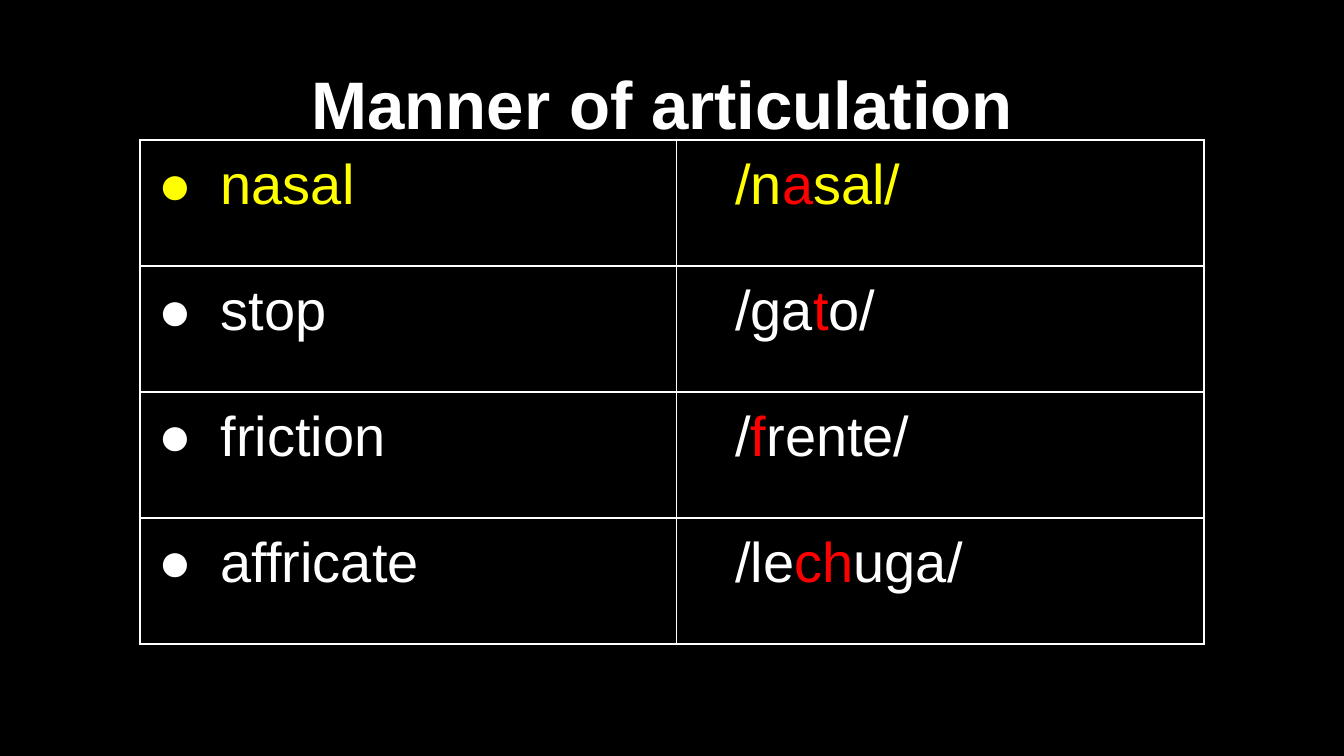
import pptx
import pptx.dml.color
import pptx.enum.text
import pptx.oxml
import pptx.oxml.ns
import pptx.util

BLACK = pptx.dml.color.RGBColor(0, 0, 0)
WHITE = pptx.dml.color.RGBColor(255, 255, 255)
YELLOW = pptx.dml.color.RGBColor(255, 255, 0)
RED = pptx.dml.color.RGBColor(255, 0, 0)

MANNERS = [
    ("nasal", ("/n", "a", "sal/"), YELLOW),
    ("stop", ("/ga", "t", "o/"), WHITE),
    ("friction", ("/", "f", "rente/"), WHITE),
    ("affricate", ("/le", "ch", "uga/"), WHITE),
]


class Deck:
    font = "Arial"
    title_size = 36
    body_size = 30
    padding = pptx.util.Inches(0.1)
    grid_columns = 96
    grid_rows = 54

    def __init__(self, width):
        self.presentation = pptx.Presentation()
        self.presentation.slide_width = pptx.util.Inches(width)
        self.presentation.slide_height = pptx.util.Inches(width * 9 / 16)

    def add_slide(self):
        self.slide = self.presentation.slides.add_slide(self.presentation.slide_layouts[5])
        self.slide.background.fill.solid()
        self.slide.background.fill.fore_color.rgb = BLACK

    def across(self, columns):
        return round(self.presentation.slide_width * columns / self.grid_columns)

    def down(self, rows):
        return round(self.presentation.slide_height * rows / self.grid_rows)

    def pad(self, holder):
        holder.margin_left = holder.margin_right = self.padding
        holder.margin_top = holder.margin_bottom = self.padding

    def style(self, run, size, color, bold=False):
        run.font.name = self.font
        run.font.size = pptx.util.Pt(size)
        run.font.bold = bold
        run.font.color.rgb = color

    def title(self, text, left, top, width, height):
        heading = self.slide.shapes.title
        heading.left, heading.width = self.across(left), self.across(width)
        heading.top, heading.height = self.down(top), self.down(height)
        frame = heading.text_frame
        frame.text = text
        frame.word_wrap = True
        frame.auto_size = pptx.enum.text.MSO_AUTO_SIZE.NONE
        frame.vertical_anchor = pptx.enum.text.MSO_ANCHOR.BOTTOM
        self.pad(frame)
        frame.paragraphs[0].alignment = pptx.enum.text.PP_ALIGN.CENTER
        self.style(frame.paragraphs[0].runs[0], self.title_size, WHITE, bold=True)

    def table(self, left, top, column_widths, row_height, row_count):
        grid = self.slide.shapes.add_table(
            row_count, len(column_widths), self.across(left), self.down(top),
            self.across(sum(column_widths)), self.down(row_height * row_count)).table
        grid.first_row = grid.horz_banding = False
        for column, width in zip(grid.columns, column_widths):
            column.width = self.across(width)
        for row in grid.rows:
            row.height = self.down(row_height)
        for cell in grid.iter_cells():
            cell.fill.background()
            self.pad(cell)
            self.border(cell, WHITE, 0.75)
        return grid

    def border(self, cell, color, points):
        properties = cell._tc.get_or_add_tcPr()
        for place, side in enumerate("LRTB"):
            properties.insert(place, pptx.oxml.parse_xml(
                f'<a:ln{side} {pptx.oxml.ns.nsdecls("a")} w="{pptx.util.Pt(points)}">'
                f'<a:solidFill><a:srgbClr val="{color}"/></a:solidFill></a:ln{side}>'))

    def indent(self, paragraph, margin, first_line):
        properties = paragraph._p.get_or_add_pPr()
        properties.set("marL", str(pptx.util.Inches(margin)))
        properties.set("indent", str(pptx.util.Inches(first_line)))
        return properties

    def bullet(self, cell, text, color):
        cell.text_frame.text = text
        paragraph = cell.text_frame.paragraphs[0]
        self.style(paragraph.runs[0], self.body_size, color)
        properties = self.indent(paragraph, 0.5, -0.46)
        for mark in (f'<a:buClr {{}}><a:srgbClr val="{color}"/></a:buClr>',
                     f'<a:buFont {{}} typeface="{self.font}"/>',
                     '<a:buChar {} char="●"/>'):
            properties.append(pptx.oxml.parse_xml(mark.format(pptx.oxml.ns.nsdecls("a"))))

    def example(self, cell, parts, color):
        paragraph = cell.text_frame.paragraphs[0]
        self.indent(paragraph, 0.34, 0)
        for part, part_color in zip(parts, (color, RED, color)):
            run = paragraph.add_run()
            run.text = part
            self.style(run, self.body_size, part_color)


def main():
    deck = Deck(10)
    deck.add_slide()
    deck.title("Manner of articulation ", 4.8, 2.2, 86.4, 9)
    manners = deck.table(10, 10, (38.3, 37.7), 9, len(MANNERS))
    for row, (manner, word, color) in enumerate(MANNERS):
        deck.bullet(manners.cell(row, 0), manner, color)
        deck.example(manners.cell(row, 1), word, color)
    deck.presentation.save("out.pptx")


if __name__ == "__main__":
    main()
